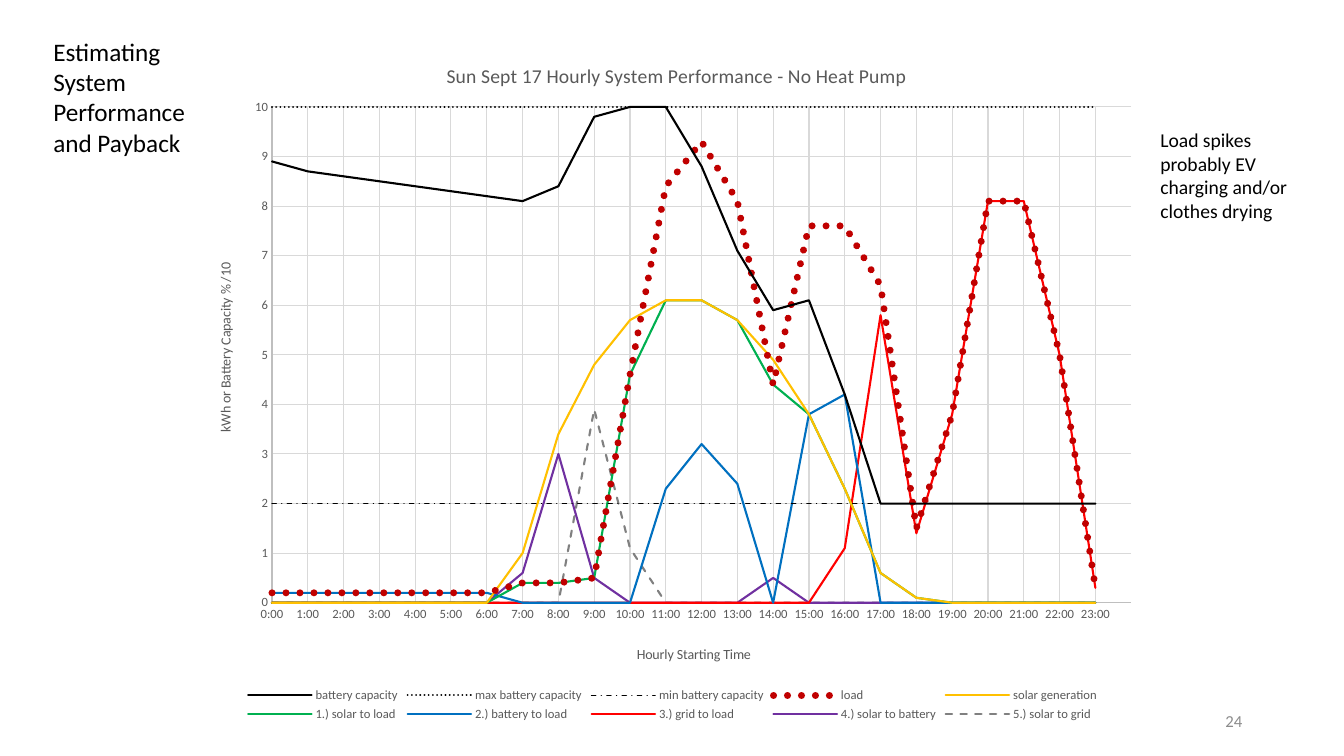
from pptx import Presentation
from pptx.chart.data import XyChartData
from pptx.dml.color import RGBColor
from pptx.enum.chart import XL_CHART_TYPE, XL_LEGEND_POSITION, XL_TICK_MARK
from pptx.enum.dml import MSO_LINE
from pptx.enum.text import MSO_ANCHOR, PP_ALIGN
from pptx.oxml import parse_xml
from pptx.oxml.ns import nsdecls, qn
from pptx.util import Inches, Pt

BLACK = RGBColor(0x00, 0x00, 0x00)
TEXT = RGBColor(0x59, 0x59, 0x59)
PAGE = RGBColor(0x8C, 0x8C, 0x8C)
AXIS = RGBColor(0xBF, 0xBF, 0xBF)
GRID = RGBColor(0xD9, 0xD9, 0xD9)
MAROON = RGBColor(0xC0, 0x00, 0x00)
GOLD = RGBColor(0xFF, 0xC0, 0x00)
GREEN = RGBColor(0x00, 0xB0, 0x50)
BLUE = RGBColor(0x00, 0x70, 0xC0)
RED = RGBColor(0xFF, 0x00, 0x00)
PURPLE = RGBColor(0x70, 0x30, 0xA0)
GRAY = RGBColor(0x80, 0x80, 0x80)


def style(font, size, color):
    for key, value in {"name": "Calibri", "size": Pt(size), "bold": False}.items():
        setattr(font, key, value)
    font.color.rgb = color


def place(node, index, **spots):
    """Give a chart part a manual layout, in fractions of the chart."""
    for old in node.findall(qn("c:layout")):
        node.remove(old)
    target = '<c:layoutTarget val="inner"/>' if node.tag == qn("c:plotArea") else ""
    modes = "".join(f'<c:{key}Mode val="edge"/>' for key in "xy")
    sizes = "".join(f'<c:{key} val="{value}"/>' for key, value in spots.items())
    node.insert(index, parse_xml(
        f'<c:layout {nsdecls("c")}><c:manualLayout>{target}{modes}{sizes}'
        "</c:manualLayout></c:layout>"))


deck = Presentation()
deck.slide_width, deck.slide_height = Inches(13.33), Inches(7.5)
slide = deck.slides.add_slide(deck.slide_layouts[6])

# Hourly values, midnight to 23:00
SERIES = [
    ("battery capacity", BLACK, 1.5, None,
     [8.9, 8.7, 8.6, 8.5, 8.4, 8.3, 8.2, 8.1, 8.4, 9.8, 10, 10,
      8.8, 7.1, 5.9, 6.1, 4.2] + [2] * 7),
    ("max battery capacity", BLACK, 1.5, MSO_LINE.ROUND_DOT, [10] * 24),
    ("min battery capacity", BLACK, 1, MSO_LINE.DASH_DOT, [2] * 24),
    ("load", MAROON, 5, MSO_LINE.ROUND_DOT,
     [0.2] * 7 + [0.4, 0.4, 0.5, 4.6, 8.4, 9.3, 8.1, 4.4, 7.6, 7.6,
                  6.4, 1.5, 3.8, 8.1, 8.1, 5, 0.3]),
    ("solar generation", GOLD, 1.5, None,
     [0] * 7 + [1, 3.4, 4.8, 5.7, 6.1, 6.1, 5.7, 4.9, 3.8, 2.3, 0.6, 0.1] + [0] * 5),
    ("1.) solar to load", GREEN, 1.5, None,
     [0] * 7 + [0.4, 0.4, 0.5, 4.6, 6.1, 6.1, 5.7, 4.4, 3.8, 2.3, 0.6, 0.1] + [0] * 5),
    ("2.) battery to load", BLUE, 1.5, None,
     [0.2] * 7 + [0] * 4 + [2.3, 3.2, 2.4, 0, 3.8, 4.2] + [0] * 7),
    ("3.) grid to load", RED, 1.5, None,
     [0] * 16 + [1.1, 5.8, 1.4, 3.8, 8.1, 8.1, 5, 0.3]),
    ("4.) solar to battery", PURPLE, 1.5, None,
     [0] * 7 + [0.6, 3, 0.5] + [0] * 4 + [0.5] + [0] * 9),
    ("5.) solar to grid", GRAY, 1.5, MSO_LINE.DASH,
     [0] * 9 + [3.9, 1.1] + [0] * 13),
]
data = XyChartData()
for name, _, _, _, values in SERIES:
    points = data.add_series(name)
    for hour, value in enumerate(values):
        points.add_data_point(hour / 24, value)

chart = slide.shapes.add_chart(
    XL_CHART_TYPE.XY_SCATTER_LINES_NO_MARKERS,
    Inches(1.93), Inches(0.31), Inches(9.48), Inches(6.89), data).chart
style(chart.font, 10, BLACK)
plot = chart.plots[0]
plot.vary_by_categories = False
for line, (_, color, width, dash, _) in zip(plot.series, SERIES):
    line.smooth = False
    pen = line.format.line
    pen.color.rgb = color
    pen.width = Pt(width)
    if dash:
        pen.dash_style = dash
    line._element.find(".//" + qn("a:ln")).set("cap", "rnd")

across, up = chart.category_axis, chart.value_axis
AXES = [
    (across, {"minimum_scale": 0, "maximum_scale": 1, "major_unit": 0.04167}, "h:mm"),
    (up, {"minimum_scale": 0, "maximum_scale": 10, "major_unit": 1}, "#,##0"),
]
for axis, scale, code in AXES:
    ticks = {"major_tick_mark": XL_TICK_MARK.NONE, "minor_tick_mark": XL_TICK_MARK.NONE}
    for key, value in {**scale, **ticks, "has_major_gridlines": True}.items():
        setattr(axis, key, value)
    labels = axis.tick_labels
    labels.number_format = code
    labels.number_format_is_linked = False
    style(labels.font, 9, TEXT)
    for pen, color in ((axis.format.line, AXIS), (axis.major_gridlines.format.line, GRID)):
        pen.color.rgb = color
        pen.width = Pt(0.75)

TITLES = [
    (chart.chart_title, "Sun Sept 17 Hourly System Performance - No Heat Pump", 14, 0.26, 0.04),
    (across.axis_title, "Hourly Starting Time", 10, 0.46, 0.88),
    (up.axis_title, "kWh or Battery Capacity % /10", 10, 0.02, 0.33),
]
for title, words, size, x, y in TITLES:
    frame = title.text_frame
    frame.text = words
    style(frame.paragraphs[0].runs[0].font, size, TEXT)
    place(title._element, 1, x=x, y=y)
turn = up.axis_title._element.find(".//" + qn("a:bodyPr"))
turn.set("rot", "-5400000")
turn.set("vert", "horz")

chart.has_legend = True
legend = chart.legend
legend.position = XL_LEGEND_POSITION.BOTTOM
legend.include_in_layout = False
style(legend.font, 9, TEXT)
place(legend._element, 1, x=0.05, y=0.94, w=0.9, h=0.06)
place(chart._chartSpace.find(".//" + qn("c:plotArea")), 0, x=0.081, y=0.109, w=0.899, h=0.714)

NOTES = [
    ("Estimating System Performance and Payback", 0.43, 0.31, 1.65, 1.31,
     18, BLACK, PP_ALIGN.LEFT, MSO_ANCHOR.TOP),
    ("24", 9.42, 6.95, 3, 0.4, 12, PAGE, PP_ALIGN.RIGHT, MSO_ANCHOR.MIDDLE),
    ("Load spikes probably EV charging and/or clothes drying", 11.41, 1.22, 1.76, 1.04,
     14, BLACK, PP_ALIGN.LEFT, MSO_ANCHOR.TOP),
]
for words, x, y, wide, high, size, color, align, anchor in NOTES:
    frame = slide.shapes.add_textbox(Inches(x), Inches(y), Inches(wide), Inches(high)).text_frame
    frame.word_wrap = True
    frame.vertical_anchor = anchor
    frame.text = words
    frame.paragraphs[0].alignment = align
    style(frame.paragraphs[0].runs[0].font, size, color)

deck.save("out.pptx")
